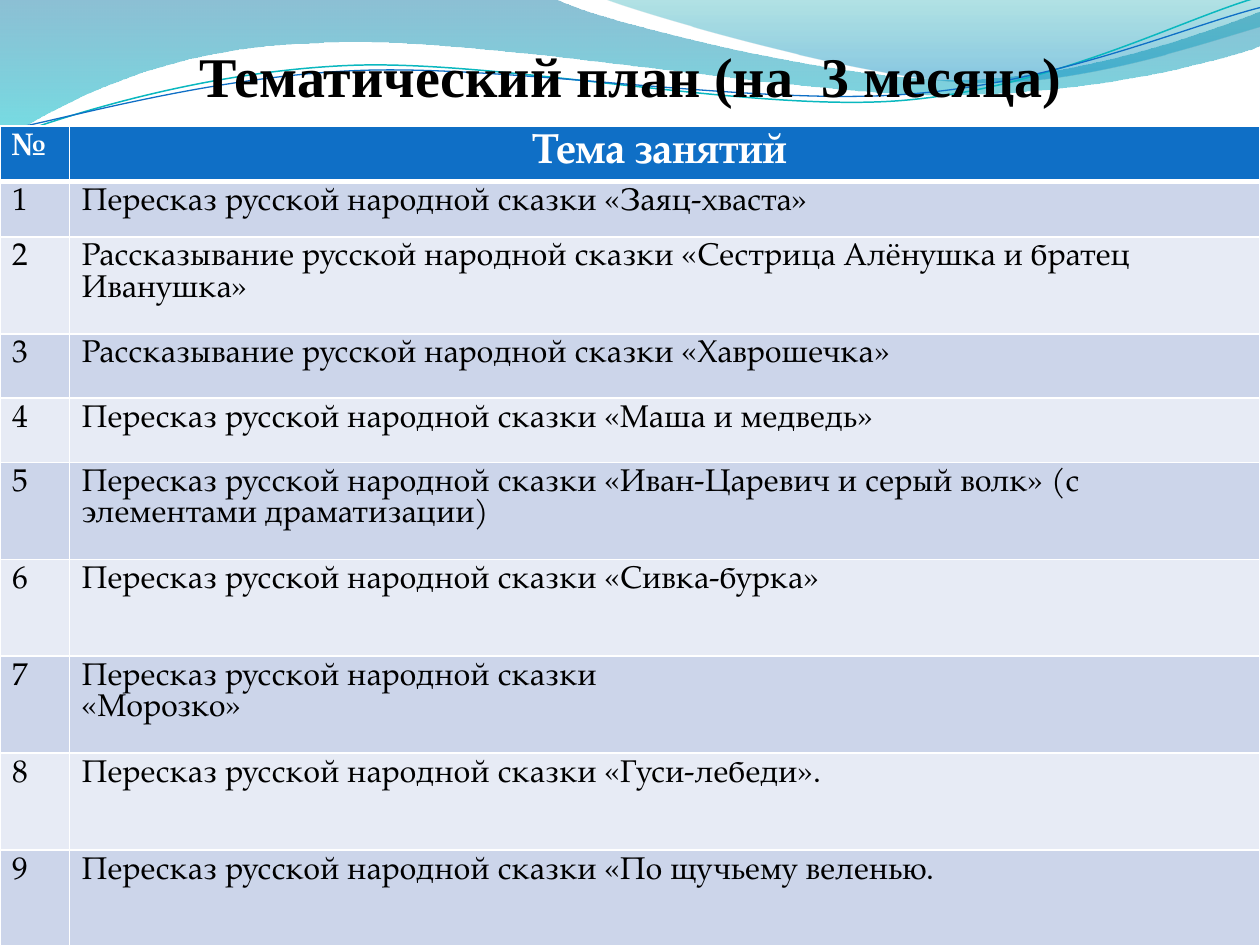
from math import cos, radians, sin

from lxml import etree
from pptx import Presentation
from pptx.dml.color import RGBColor
from pptx.enum.text import MSO_ANCHOR, MSO_AUTO_SIZE, PP_ALIGN
from pptx.oxml.ns import qn
from pptx.util import Inches, Pt

CENTER, LEFT = PP_ALIGN.CENTER, PP_ALIGN.LEFT
BOTTOM = MSO_ANCHOR.BOTTOM
NO_AUTOFIT = MSO_AUTO_SIZE.NONE

WHITE = RGBColor(0xFF, 0xFF, 0xFF)
BLACK = RGBColor(0x00, 0x00, 0x00)
BLUE = RGBColor(0x0F, 0x6F, 0xC6)
TEAL = RGBColor(0x0A, 0xB8, 0xBF)
BANDS = (RGBColor(0xCC, 0xD5, 0xEA), RGBColor(0xE7, 0xEB, 0xF5))
DEEP_BLUE = RGBColor(0x00, 0x74, 0xA1)
AQUA = RGBColor(0x00, 0xC6, 0xCF)
SEA_GREEN = RGBColor(0x00, 0xA1, 0xA9)
SKY_BLUE = RGBColor(0x00, 0x8B, 0xBF)

TITLE_FONT = "Times New Roman"
TABLE_FONT = "TeX Gyre Pagella"
LINE_ROTATION = 357.3

# Each wave has a box and steps: two numbers for a straight step, six for a Bézier.
# Gradient stops hold position, colour and opacity in per cent.
FILLED_WAVES = [
    ((-0.01, -0.01, 10.02, 1.14),
     [(0, 0), (4.4, -0.01), (4.76, 0.17, 6.64, 0.63, 7.58, 0.63),
      (8.53, 0.63, 9.58, 0.26, 10, 0.09), (10.01, 0.36),
      (9.83, 0.44, 8.7, 0.76, 7.46, 0.75), (6.22, 0.75, 3.82, 0.28, 2.57, 0.34),
      (1.29, 0.36, 0.46, 0.83, -0.01, 1.13), (0, 0)],
     [(0, DEEP_BLUE, 45), (1, AQUA, 55)]),
    ((4.79, -0.01, 5.21, 0.7),
     [(4.79, -0.01), (5.09, 0.11, 6.82, 0.62, 7.69, 0.65),
      (8.56, 0.69, 9.61, 0.32, 10, 0.21), (10, 0), (4.79, -0.01)],
     [(0, SEA_GREEN, 30), (0.8, SKY_BLUE, 45)]),
]
LINE_WAVES = [
    ((-0.02, 0.22, 10.02, 0.71),
     [(0, 1.11), (0.48, 0.93, 1.58, 0.57, 2.77, 0.52),
      (3.95, 0.47, 5.93, 0.89, 7.13, 0.8), (8.33, 0.71, 9.38, 0.15, 9.98, -0.02)],
     TEAL, 0.85),
    ((-0.02, 0.3, 10.03, 0.58),
     [(0, 1.04), (0.47, 0.96, 1.64, 0.61, 2.83, 0.56),
      (4.03, 0.51, 5.97, 0.84, 7.17, 0.75), (8.36, 0.67, 9.41, 0.21, 10, 0.06)],
     BLUE, 0.75),
]

TOPICS = [
    "Пересказ русской народной сказки «Заяц-хваста»",
    "Рассказывание русской народной сказки «Сестрица Алёнушка и братец Иванушка»",
    "Рассказывание русской народной сказки «Хаврошечка»",
    "Пересказ русской народной сказки «Маша и медведь»",
    "Пересказ русской народной сказки «Иван-Царевич и серый волк» "
    "(с элементами драматизации)",
    "Пересказ русской народной сказки «Сивка-бурка»",
    "Пересказ русской народной сказки\n«Морозко»",
    "Пересказ русской народной сказки «Гуси-лебеди».",
    "Пересказ русской народной сказки «По щучьему веленью.",
]
COLUMN_WIDTHS = [0.55, 9.45]
ROW_HEIGHTS = [0.44, 0.44, 0.77, 0.51, 0.51] + [0.77] * 5


def set_values(target, values):
    for name, value in values.items():
        setattr(target, name, value)


def place(shape, box):
    set_values(shape, dict(zip(("left", "top", "width", "height"), box)))


def to_local(point, box, rotation):
    """Undo the rotation about the middle of the box and measure from its corner."""
    left, top, width, height = box
    x, y = point[0] - left - width / 2, point[1] - top - height / 2
    angle = radians(-rotation)
    return (Inches(width / 2 + x * cos(angle) - y * sin(angle)),
            Inches(height / 2 + x * sin(angle) + y * cos(angle)))


def add_wave(page, box, steps, rotation=0):
    closed = steps[0] == steps[-1]
    curves = [[to_local(step[i:i + 2], box, rotation) for i in range(0, len(step), 2)]
              for step in steps]
    builder = page.shapes.build_freeform(*curves[0][0], scale=1.0)
    builder.add_line_segments([curve[-1] for curve in curves[1:]], close=closed)
    wave = builder.convert_to_shape()
    place(wave, [Inches(length) for length in box])
    wave.rotation = rotation
    wave.shadow.inherit = False

    outline = next(wave.element.iter(qn("a:path")))
    outline.set("w", str(wave.width))
    outline.set("h", str(wave.height))
    for command in list(outline):
        outline.remove(command)
    for index, curve in enumerate(curves):
        name = "moveTo" if index == 0 else "lnTo" if len(curve) == 1 else "cubicBezTo"
        command = etree.SubElement(outline, qn(f"a:{name}"))
        for x, y in curve:
            etree.SubElement(command, qn("a:pt"), x=str(x), y=str(y))
    if closed:
        etree.SubElement(outline, qn("a:close"))
    return wave


def add_waves(page):
    for box, steps, stops in FILLED_WAVES:
        wave = add_wave(page, box, steps)
        wave.line.fill.background()
        wave.fill.gradient()
        wave.fill.gradient_angle = 270
        for stop, (position, color, _) in zip(wave.fill.gradient_stops, stops):
            stop.position = position
            stop.color.rgb = color
        colors = wave.element.spPr.iter(qn("a:srgbClr"))
        for color, (_, _, opacity) in zip(colors, stops):
            etree.SubElement(color, qn("a:alpha"), val=str(opacity * 1000))
    for box, steps, color, width in LINE_WAVES:
        wave = add_wave(page, box, steps, LINE_ROTATION)
        wave.fill.background()
        wave.line.color.rgb = color
        wave.line.width = Pt(width)


def write_para(para, text, align, color, font_values):
    para.alignment = align
    span = para.add_run()
    span.text = text
    set_values(span.font, font_values)
    span.font.color.rgb = color


def add_title(page, box):
    title = page.shapes.title
    place(title, box)
    frame = title.text_frame
    set_values(frame, {
        "word_wrap": True, "auto_size": NO_AUTOFIT, "vertical_anchor": BOTTOM,
        "margin_left": 0, "margin_right": 0,
        "margin_top": Inches(0.05), "margin_bottom": 0})
    write_para(frame.paragraphs[0], "Тематический план (на  3 месяца)", CENTER, BLACK,
               {"name": TITLE_FONT, "size": Pt(32), "bold": True})
    page.shapes.element.append(title.element)  # in front of the waves


def set_borders(cell, bottom_width):
    properties = cell._tc.get_or_add_tcPr()
    for side, width in (("L", 1), ("R", 1), ("T", 1), ("B", bottom_width)):
        line = etree.SubElement(properties, qn(f"a:ln{side}"), w=str(Pt(width)))
        fill = etree.SubElement(line, qn("a:solidFill"))
        etree.SubElement(fill, qn("a:srgbClr"), val=str(WHITE))


def fill_cell(cell, text, size, align, is_header, background):
    set_borders(cell, 3 if is_header else 1)
    cell.fill.solid()
    cell.fill.fore_color.rgb = background
    frame = cell.text_frame
    for index, line in enumerate(text.split("\n")):
        para = frame.add_paragraph() if index else frame.paragraphs[0]
        para.line_spacing = Pt(size)
        write_para(para, line, align, WHITE if is_header else BLACK,
                   {"name": TABLE_FONT, "size": Pt(size), "bold": is_header})


def add_plan_table(page, box):
    table = page.shapes.add_table(len(ROW_HEIGHTS), len(COLUMN_WIDTHS), *box).table
    for column, width in zip(table.columns, COLUMN_WIDTHS):
        column.width = Inches(width)
    for row, height in zip(table.rows, ROW_HEIGHTS):
        row.height = Inches(height)
    fill_cell(table.cell(0, 0), "№", 18, LEFT, True, BLUE)
    fill_cell(table.cell(0, 1), "Тема занятий ", 24, CENTER, True, BLUE)
    for number, topic in enumerate(TOPICS, 1):
        band = BANDS[(number - 1) % 2]
        for column, text in enumerate((str(number), topic)):
            fill_cell(table.cell(number, column), text, 18, LEFT, False, band)


def main():
    deck = Presentation()
    deck.slide_width, deck.slide_height = Inches(10), Inches(7.5)
    page = deck.slides.add_slide(deck.slide_layouts[5])
    page.background.fill.solid()
    page.background.fill.fore_color.rgb = WHITE
    add_waves(page)
    add_title(page, (Inches(0.55), Inches(0), Inches(8.91), Inches(0.86)))
    add_plan_table(page, (Inches(0), Inches(1), Inches(10), Inches(sum(ROW_HEIGHTS))))
    deck.save("out.pptx")


if __name__ == "__main__":
    main()
